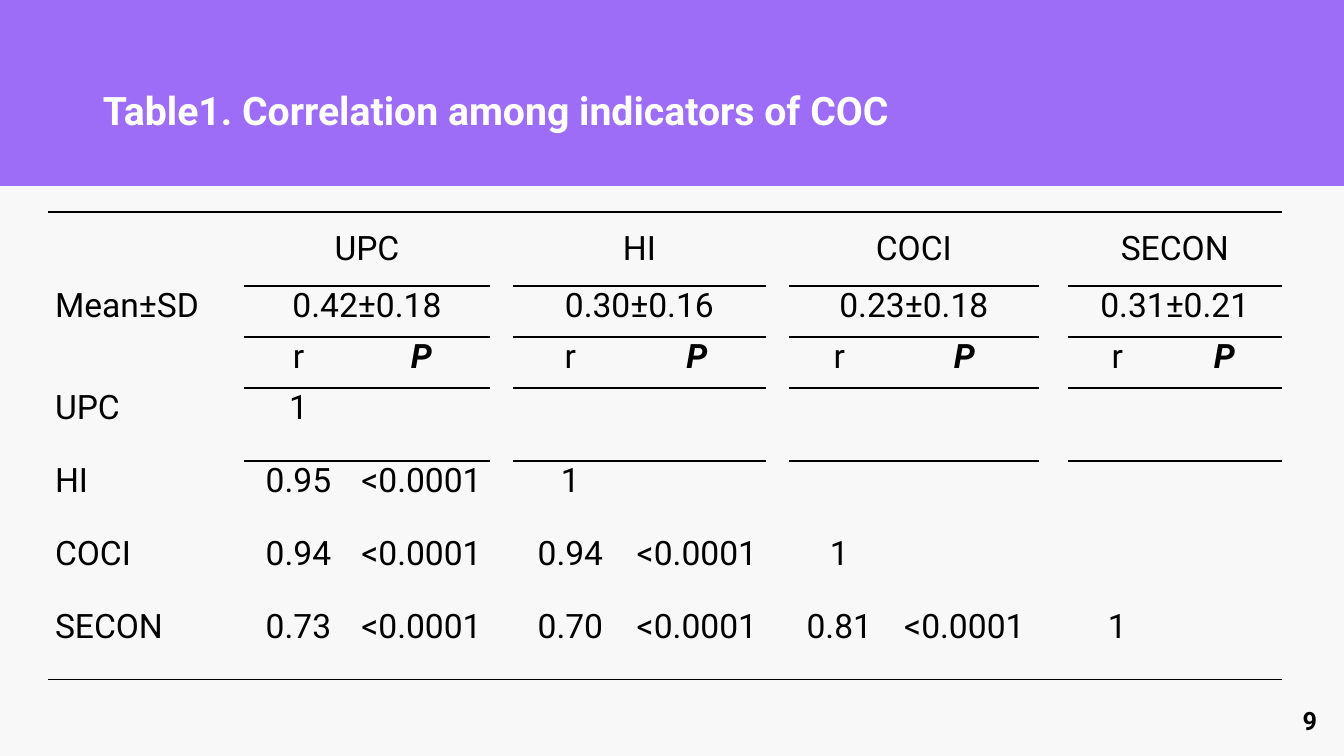
from dataclasses import dataclass

from lxml.etree import SubElement
from pptx import Presentation
from pptx.dml.color import RGBColor as Rgb
from pptx.enum.shapes import MSO_SHAPE as Shape
from pptx.enum.text import MSO_ANCHOR as Anchor, PP_ALIGN as Align
from pptx.oxml.ns import qn
from pptx.util import Emu, Pt

PX = 914400 / 100.8
PLAIN_TABLE = "{2D5ABB26-0587-4C30-8999-92F81FD0307C}"


@dataclass(frozen=True)
class Theme:
    font: str = "Roboto"
    banner: str = "9E6DF7"
    page: str = "F8F8F8"
    light: str = "FFFFFF"
    ink: str = "000000"
    title_size: int = 28
    table_size: int = 24
    number_size: int = 18
    rule_width: int = 1


def px(*lengths):
    return [Emu(round(length * PX)) for length in lengths]


class SlideBuilder:
    """Draws styled elements on one slide, with lengths given in px."""

    def __init__(self, slide, theme):
        self.slide, self.theme = slide, theme

    def band(self, box, colour):
        band = self.slide.shapes.add_shape(Shape.RECTANGLE, *px(*box))
        band.shadow.inherit = False
        band.fill.solid()
        band.fill.fore_color.rgb = Rgb.from_string(colour)
        band.line.fill.background()

    def words(self, paragraph, content, size, colour, align=Align.LEFT, **styles):
        paragraph.alignment = align
        run = paragraph.add_run()
        run.text = content
        run.font.color.rgb = Rgb.from_string(colour)
        for name, value in {"name": self.theme.font, "size": Pt(size), **styles}.items():
            setattr(run.font, name, value)

    def text(self, box, content, size, colour, align=Align.LEFT, spacing=1.0):
        frame = self.slide.shapes.add_textbox(*px(*box)).text_frame
        for name, value in {"word_wrap": True, "vertical_anchor": Anchor.MIDDLE}.items():
            setattr(frame, name, value)
        frame.paragraphs[0].line_spacing = spacing
        self.words(frame.paragraphs[0], content, size, colour, align, bold=True)

    def table(self, left, top, widths, heights):
        box = px(left, top, sum(widths), sum(heights))
        table = self.slide.shapes.add_table(len(heights), len(widths), *box).table
        table.first_row = table.horz_banding = False
        table._tbl.tblPr.find(qn("a:tableStyleId")).text = PLAIN_TABLE
        for column, width in zip(table.columns, px(*widths)):
            column.width = width
        for row, height in zip(table.rows, px(*heights)):
            row.height = height
        side, = px(7)
        margins = {"margin_left": side, "margin_right": side, "margin_top": 0, "margin_bottom": 0}
        for cell in table.iter_cells():
            for name, value in margins.items():
                setattr(cell, name, value)
        return table

    def cell(self, cell, content, align=Align.CENTER, anchor=Anchor.TOP, **styles):
        cell.vertical_anchor = anchor
        self.words(cell.text_frame.paragraphs[0], content, self.theme.table_size,
                   self.theme.ink, align, **styles)

    def borders(self, cell, edges):
        properties = cell._tc.get_or_add_tcPr()
        for edge in edges:
            line = SubElement(properties, qn(f"a:ln{edge}"), w=str(Pt(self.theme.rule_width)))
            fill = SubElement(line, qn("a:solidFill"))
            SubElement(fill, qn("a:srgbClr"), val=self.theme.ink)
        cell.fill.background()


INDICATORS = [
    ("UPC", "0.42±0.18", []),
    ("HI", "0.30±0.16", ["0.95"]),
    ("COCI", "0.23±0.18", ["0.94", "0.94"]),
    ("SECON", "0.31±0.21", ["0.73", "0.70", "0.81"]),
]
WIDTHS = [196, 109, 137, 23, 115, 138, 23, 101, 149, 29, 99, 115]
HEIGHTS = [74, 51, 51] + [73] * 4
PAIR_EDGES = {0: "TB", 1: "T", 2: "B", 3: "T", 6: "B"}
GAP_EDGES = {0: "T", 6: "B"}


def correlation_table(builder):
    table = builder.table(48, 212, WIDTHS, HEIGHTS)
    builder.cell(table.cell(1, 0), "Mean±SD", Align.LEFT)
    for index, (name, mean, correlations) in enumerate(INDICATORS):
        r_column, row = 1 + 3 * index, 3 + index
        p_column = r_column + 1
        for header_row in (0, 1):
            table.cell(header_row, r_column).merge(table.cell(header_row, p_column))
        builder.cell(table.cell(0, r_column), name, anchor=Anchor.MIDDLE)
        builder.cell(table.cell(1, r_column), mean)
        builder.cell(table.cell(2, r_column), "r")
        builder.cell(table.cell(2, p_column), "P", bold=True, italic=True)
        builder.cell(table.cell(row, 0), name, Align.LEFT)
        builder.cell(table.cell(row, r_column), "1")
        for other, correlation in enumerate(correlations):
            builder.cell(table.cell(row, 1 + 3 * other), correlation)
            builder.cell(table.cell(row, 2 + 3 * other), "<0.0001")
    for row in range(len(HEIGHTS)):
        for column in range(len(WIDTHS)):
            edges = PAIR_EDGES if column % 3 else GAP_EDGES
            builder.borders(table.cell(row, column), edges.get(row, ""))


def main():
    deck = Presentation()
    deck.slide_width, deck.slide_height = px(1344, 756)
    theme = Theme()
    builder = SlideBuilder(deck.slides.add_slide(deck.slide_layouts[6]), theme)
    builder.band((0, 186, 1344, 570), theme.page)
    builder.band((0, 0, 1344, 186), theme.banner)
    builder.text((93, 40, 1159, 146), "Table1. Correlation among indicators of COC",
                 theme.title_size, theme.light, spacing=0.9)
    builder.text((1025, 700, 302, 40), "9", theme.number_size, theme.ink, Align.RIGHT)
    correlation_table(builder)
    deck.save("out.pptx")


if __name__ == "__main__":
    main()
